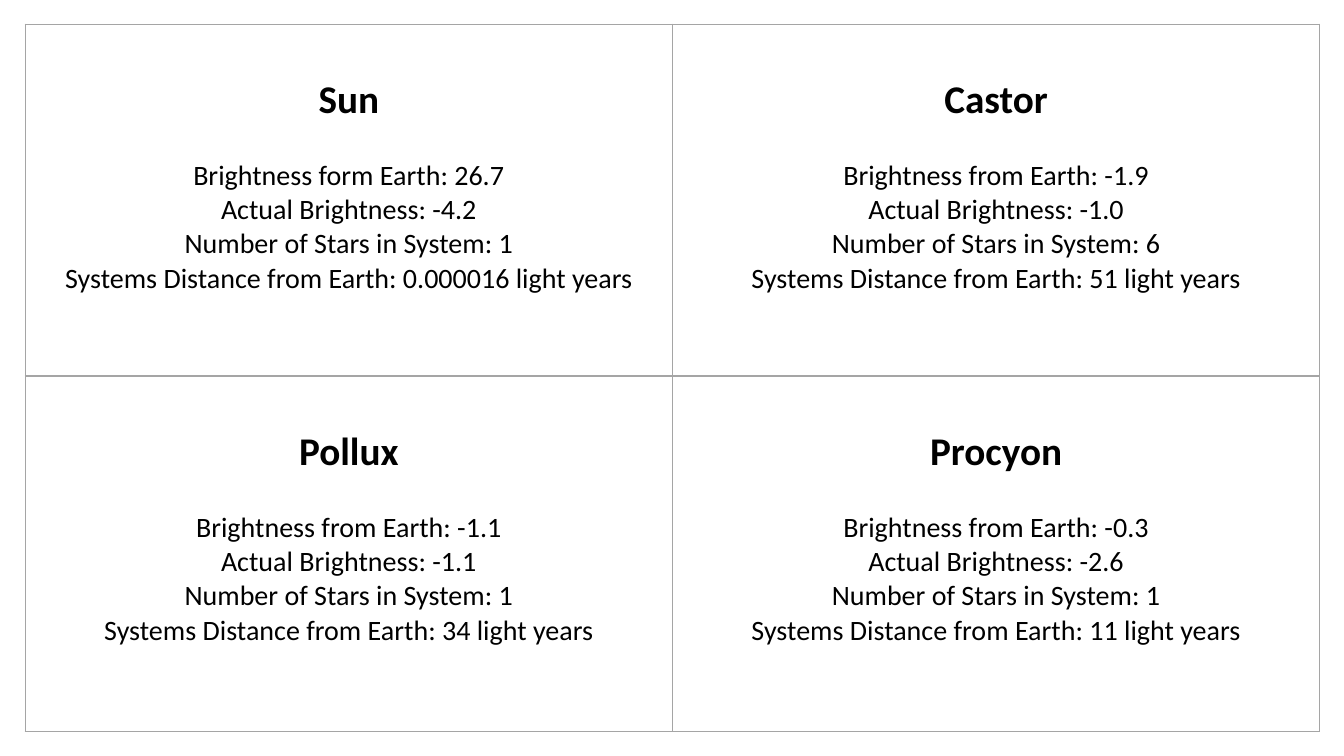
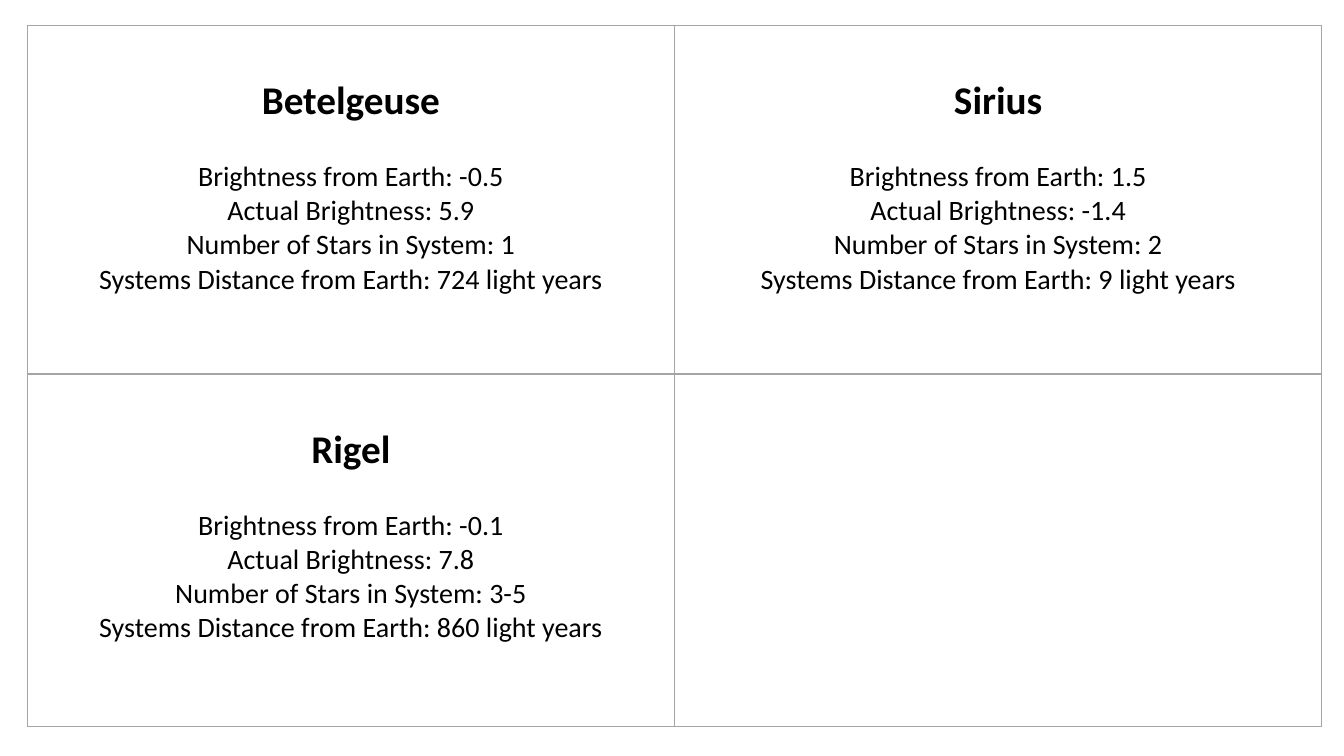
from lxml.etree import SubElement
from pptx import Presentation
from pptx.dml.color import RGBColor
from pptx.enum.text import PP_ALIGN
from pptx.oxml.ns import qn
from pptx.util import Inches, Pt

COLORS = {"text": "000000", "border": "A5A5A5"}
FONT = "Calibri"
NAME_SIZE, FACT_SIZE = 28, 20
BORDER_WIDTH = 1
COLUMNS = 2
COLUMN_WIDTH = 6.42
CARD_TOP_MARGIN = 0.52
NAME_GAP = 24.4
BLANK_LAYOUT = 6

FACT_LABELS = (
    "Brightness from Earth: {}",
    "Actual Brightness: {}",
    "Number of Stars in System: {}",
    "Systems Distance from Earth: {} light years",
)

# Each slide: left and top of its grid, row heights, and its stars
SLIDES = (
    {
        "origin": (0.25, 0.24),
        "rows": (3.49, 3.53),
        "stars": (
            ("Sun", "26.7", "-4.2", "1", "0.000016"),
            ("Castor", "-1.9", "-1.0", "6", "51"),
            ("Pollux", "-1.1", "-1.1", "1", "34"),
            ("Procyon", "-0.3", "-2.6", "1", "11"),
        ),
    },
    {
        "origin": (0.27, 0.25),
        "rows": (3.46, 3.5),
        "stars": (
            ("Betelgeuse", "-0.5", "5.9", "1", "724"),
            ("Sirius", "1.5", "-1.4", "2", "9"),
            ("Rigel", "-0.1", "7.8", "3-5", "860"),
        ),
    },
)


def style_cell(cell):
    """Draw the four borders and leave the cell unfilled."""
    properties = cell._tc.get_or_add_tcPr()
    for side in ("a:lnL", "a:lnR", "a:lnT", "a:lnB"):
        line = SubElement(properties, qn(side), w=str(Pt(BORDER_WIDTH)))
        fill = SubElement(line, qn("a:solidFill"))
        SubElement(fill, qn("a:srgbClr"), val=COLORS["border"])
    cell.fill.background()
    cell.margin_top = Inches(CARD_TOP_MARGIN)


def style_paragraph(paragraph, size, bold=False):
    paragraph.alignment = PP_ALIGN.CENTER
    paragraph.font.name = FONT
    paragraph.font.size = Pt(size)
    paragraph.font.bold = bold
    paragraph.font.color.rgb = RGBColor.from_string(COLORS["text"])


def fill_star_card(cell, name, *values):
    """Write a star's name above its four facts."""
    facts = [label.format(value) for label, value in zip(FACT_LABELS, values)]
    if name == "Sun":
        facts[0] = facts[0].replace("from", "form")  # wording of this card
    cell.text = "\n".join([name, *facts])
    heading, *fact_paragraphs = cell.text_frame.paragraphs
    style_paragraph(heading, NAME_SIZE, bold=True)
    heading.space_after = Pt(NAME_GAP)
    for paragraph in fact_paragraphs:
        style_paragraph(paragraph, FACT_SIZE)


def add_star_slide(presentation, origin, rows, stars):
    """Add a slide with a grid of star cards, filled row by row."""
    slide = presentation.slides.add_slide(presentation.slide_layouts[BLANK_LAYOUT])
    left, top = origin
    table = slide.shapes.add_table(
        len(rows), COLUMNS, Inches(left), Inches(top),
        Inches(COLUMNS * COLUMN_WIDTH), Inches(sum(rows)),
    ).table
    table.first_row = table.horz_banding = False
    for row, height in zip(table.rows, rows):
        row.height = Inches(height)
    for cell in table.iter_cells():
        style_cell(cell)
    for cell, star in zip(table.iter_cells(), stars):
        fill_star_card(cell, *star)


def main():
    presentation = Presentation()
    presentation.slide_width = Inches(13.33)
    presentation.slide_height = Inches(7.5)
    for content in SLIDES:
        add_star_slide(presentation, **content)
    presentation.save("out.pptx")


if __name__ == "__main__":
    main()
